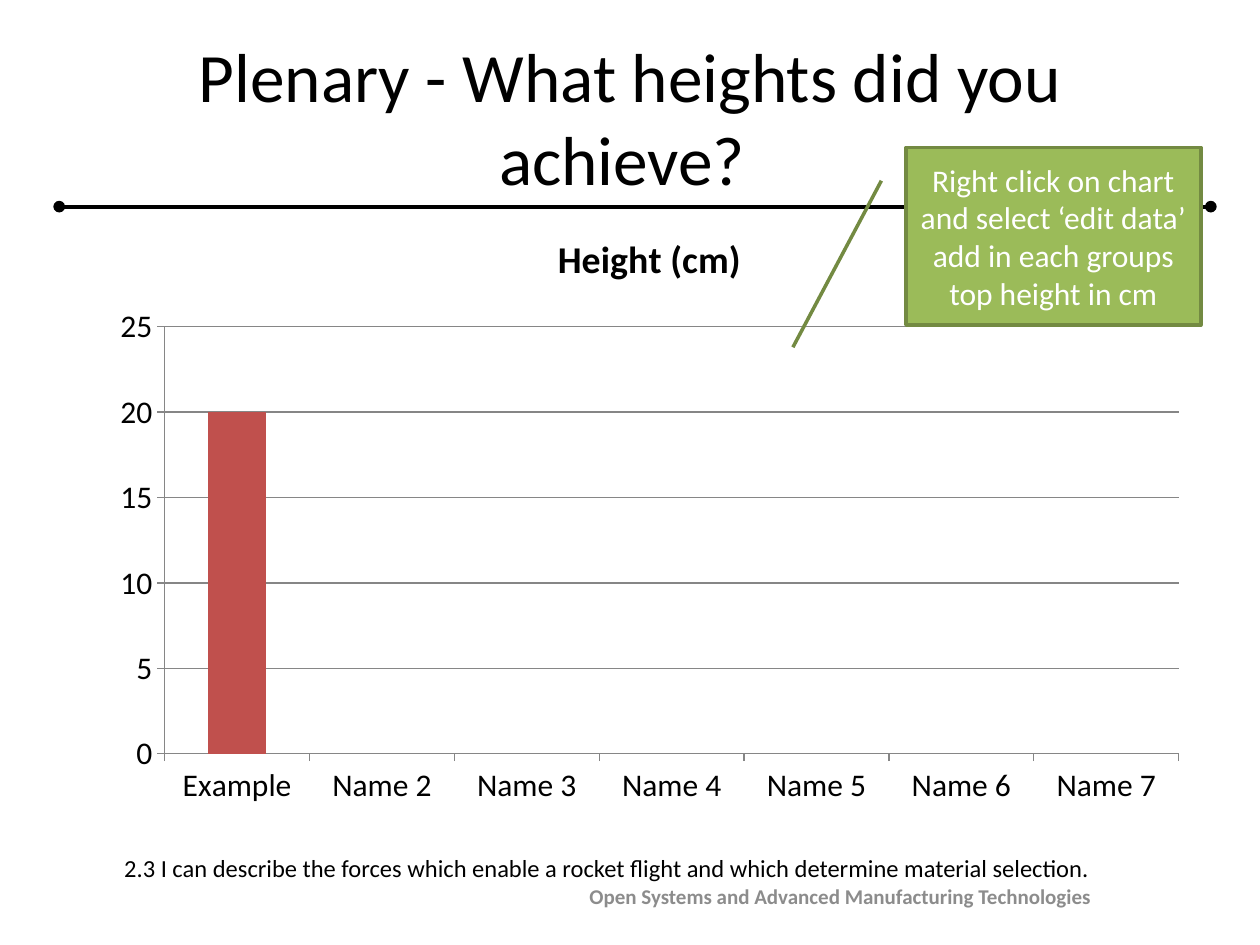
from dataclasses import dataclass

from lxml.etree import SubElement
from pptx import Presentation
from pptx.chart.data import CategoryChartData
from pptx.dml.color import RGBColor
from pptx.enum.chart import XL_CHART_TYPE as CHART, XL_TICK_MARK as TICK
from pptx.enum.shapes import MSO_CONNECTOR as CONN, MSO_SHAPE as SHAPE
from pptx.enum.text import MSO_ANCHOR as ANCHOR, MSO_AUTO_SIZE as FIT, PP_ALIGN as ALIGN
from pptx.oxml.ns import qn
from pptx.util import Inches, Pt


@dataclass(frozen=True)
class Theme:
    """Colours, font and type sizes of the slide."""
    font: str = "Calibri"
    ink: str = "000000"
    muted: str = "8C8C8C"
    axis: str = "868686"
    series: str = "4F81BD"
    example: str = "C0504D"
    callout: str = "9BBB59"
    callout_line: str = "738A42"
    light: str = "FFFFFF"
    title: float = 39.6
    body: float = 18
    chart_title: float = 21.6
    objective: float = 14
    footer: float = 12


T = Theme()


def rgb(value):
    """Turn a hex string into a colour."""
    return RGBColor.from_string(value)


def inches(box):
    """Turn a box of numbers into lengths."""
    return [Inches(v) for v in box]


def style_font(font, size, color=T.ink, bold=False):
    """Format a font in the theme typeface."""
    font.name, font.size, font.bold = T.font, Pt(size), bold
    font.color.rgb = rgb(color)


def put_text(tf, text, size, color=T.ink, bold=False, align=ALIGN.CENTER, anchor=ANCHOR.MIDDLE):
    """Write one formatted paragraph into a text frame."""
    tf.word_wrap, tf.auto_size, tf.vertical_anchor = True, FIT.NONE, anchor
    p = tf.paragraphs[0]
    p.alignment = align
    r = p.add_run()
    r.text = text
    style_font(r.font, size, color, bold)


def add_rule(s, box):
    """Draw the horizontal rule with round ends."""
    left, top, width, height = inches(box)
    line = s.shapes.add_connector(CONN.STRAIGHT, left, top, left + width, top + height)
    line.line.color.rgb, line.line.width = rgb(T.ink), Pt(2.25)
    ln = line.line._get_or_add_ln()
    for end in ("a:headEnd", "a:tailEnd"):
        SubElement(ln, qn(end), type="oval")
    SubElement(line._element.spPr, qn("a:effectLst"))


def add_title(s, box, text):
    """Place the slide title."""
    sp = s.shapes.title
    sp.left, sp.top, sp.width, sp.height = inches(box)
    put_text(sp.text_frame, text, T.title)


def add_note(s, box, text, size, **fmt):
    """Place a right-aligned line at the foot of the slide."""
    tf = s.shapes.add_textbox(*inches(box)).text_frame
    put_text(tf, text, size, align=ALIGN.RIGHT, anchor=ANCHOR.TOP, **fmt)


def add_height_chart(s, box):
    """Place the column chart of group heights."""
    data = CategoryChartData()
    data.categories = ["Example"] + [f"Name {n}" for n in range(2, 8)]
    data.add_series("Height (cm)", [20] + [None] * 6)
    chart = s.shapes.add_chart(CHART.COLUMN_CLUSTERED, *inches(box), data).chart
    style_font(chart.font, T.body)
    chart.has_legend, chart.has_title = False, True
    p = chart.chart_title.text_frame.paragraphs[0]
    r = p.add_run()
    r.text = "Height (cm)"
    style_font(r.font, T.chart_title, bold=True)
    chart.chart_title.include_in_layout = False
    for axis in (chart.category_axis, chart.value_axis):
        axis.major_tick_mark, axis.minor_tick_mark = TICK.OUTSIDE, TICK.NONE
        axis.format.line.color.rgb = rgb(T.axis)
    axis = chart.value_axis
    axis.minimum_scale, axis.maximum_scale, axis.major_unit = 0, 25, 5
    axis.major_gridlines.format.line.color.rgb = rgb(T.axis)
    plot = chart.plots[0]
    plot.gap_width, plot.vary_by_categories = 150, False
    series = plot.series[0]
    for part, color in ((series, T.series), (series.points[0], T.example)):
        part.format.fill.solid()
        part.format.fill.fore_color.rgb = rgb(color)


def add_callout(s, box, text):
    """Place the callout with its leader line."""
    sp = s.shapes.add_shape(SHAPE.LINE_CALLOUT_1, *inches(box))
    sp.shadow.inherit = False
    sp.fill.solid()
    sp.fill.fore_color.rgb = rgb(T.callout)
    sp.line.color.rgb, sp.line.width = rgb(T.callout_line), Pt(2)
    put_text(sp.text_frame, text, T.body, color=T.light)


def main():
    """Build and save the slide."""
    prs = Presentation()
    prs.slide_width, prs.slide_height = Inches(10), Inches(7.5)
    s = prs.slides.add_slide(prs.slide_layouts[5])
    add_rule(s, (0.47, 1.64, 9.14, 0))
    add_note(s, (0.78, 6.72, 7.97, 0.34),
             "2.3 I can describe the forces which enable a rocket flight "
             "and which determine material selection.", T.objective)
    add_note(s, (4.53, 6.96, 4.23, 0.3),
             "Open Systems and Advanced Manufacturing Technologies",
             T.footer, color=T.muted, bold=True)
    add_title(s, (0.5, 0.3, 9, 1.25), "Plenary - What heights did you achieve? ")
    add_height_chart(s, (0.78, 1.64, 8.75, 4.84))
    add_callout(s, (7.19, 1.17, 2.34, 1.41),
                "Right click on chart and select ‘edit data’ "
                "add in each groups top height in cm")
    prs.save("out.pptx")


if __name__ == "__main__":
    main()
